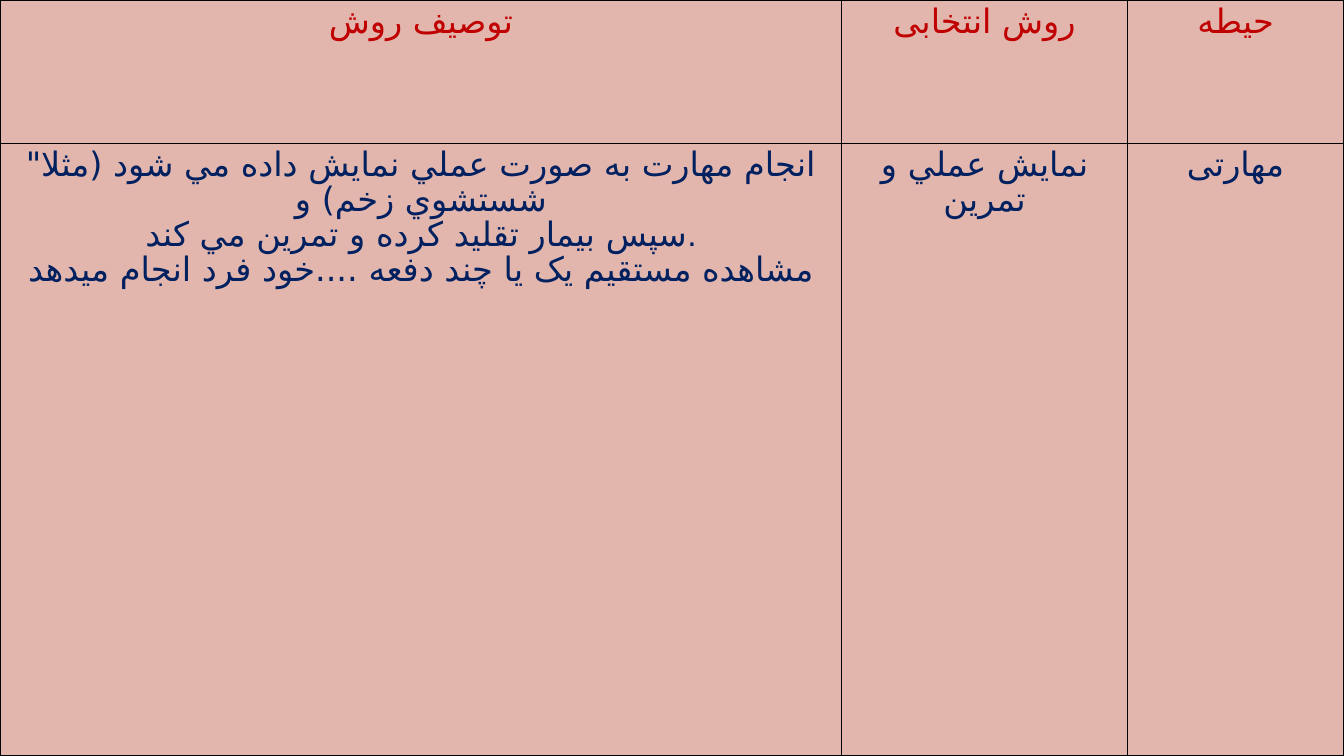
from lxml import etree
from pptx import Presentation
from pptx import util as u
from pptx.dml.color import RGBColor
from pptx.enum import text
from pptx.oxml import ns

COLORS = {"background": "E2B6AD", "heading": "C00000", "body": "002060", "grid": "000000"}
COLUMNS = (8.35, 2.83, 2.15)
ROWS = (1.42, 6.08)
HEADINGS = (["توصیف روش"], ["روش انتخابی"], ["حیطه"])
METHOD = (
    [
        "انجام مهارت به صورت عملي نمایش داده مي شود (مثلا\" شستشوي زخم) و",
        "سپس بیمار تقلید كرده و تمرین مي كند.",
        "مشاهده مستقیم یک یا چند دفعه ....خود فرد انجام میدهد",
    ],
    ["نمایش عملي و تمرین"],
    ["مهارتی"],
)


def add_borders(cell, color, width=1):
    """Draw a solid line on each side of a table cell."""
    tc_pr = cell._tc.get_or_add_tcPr()
    for side in ("lnL", "lnR", "lnT", "lnB"):
        ln = etree.SubElement(tc_pr, ns.qn(f"a:{side}"), w=str(u.Pt(width)))
        fill = etree.SubElement(ln, ns.qn("a:solidFill"))
        etree.SubElement(fill, ns.qn("a:srgbClr"), val=color)


def fill_cell(cell, lines, color):
    """Write centred paragraphs into an unfilled, bordered cell."""
    add_borders(cell, COLORS["grid"])
    cell.fill.background()
    tf = cell.text_frame
    for i, line in enumerate(lines):
        p = tf.add_paragraph() if i else tf.paragraphs[0]
        p.alignment = text.PP_ALIGN.CENTER
        p.line_spacing = 0.9
        r = p.add_run()
        r.text = line
        r.font.size = u.Pt(24)
        r.font.name = "Arial"
        r.font.bold = False
        r.font.color.rgb = RGBColor.from_string(color)
        etree.SubElement(r.font._element, ns.qn("a:cs"), typeface="DejaVu Sans")


def add_method_table(s, width, height):
    """Add the full-slide table of teaching methods."""
    frame = s.shapes.add_table(len(ROWS), len(COLUMNS), 0, 0, width, height)
    table = frame.table
    table.horz_banding = False
    for column, share in zip(table.columns, COLUMNS):
        column.width = int(width * share / sum(COLUMNS))
    for row, share in zip(table.rows, ROWS):
        row.height = int(height * share / sum(ROWS))
    for row, contents, color in zip(table.rows, (HEADINGS, METHOD), ("heading", "body")):
        for cell, lines in zip(row.cells, contents):
            fill_cell(cell, lines, COLORS[color])


def main():
    """Build the slide and save it."""
    prs = Presentation()
    prs.slide_width, prs.slide_height = u.Inches(13.33), u.Inches(7.5)
    s = prs.slides.add_slide(prs.slide_layouts[6])
    s.background.fill.solid()
    s.background.fill.fore_color.rgb = RGBColor.from_string(COLORS["background"])
    add_method_table(s, prs.slide_width, prs.slide_height)
    prs.save("out.pptx")


if __name__ == "__main__":
    main()
